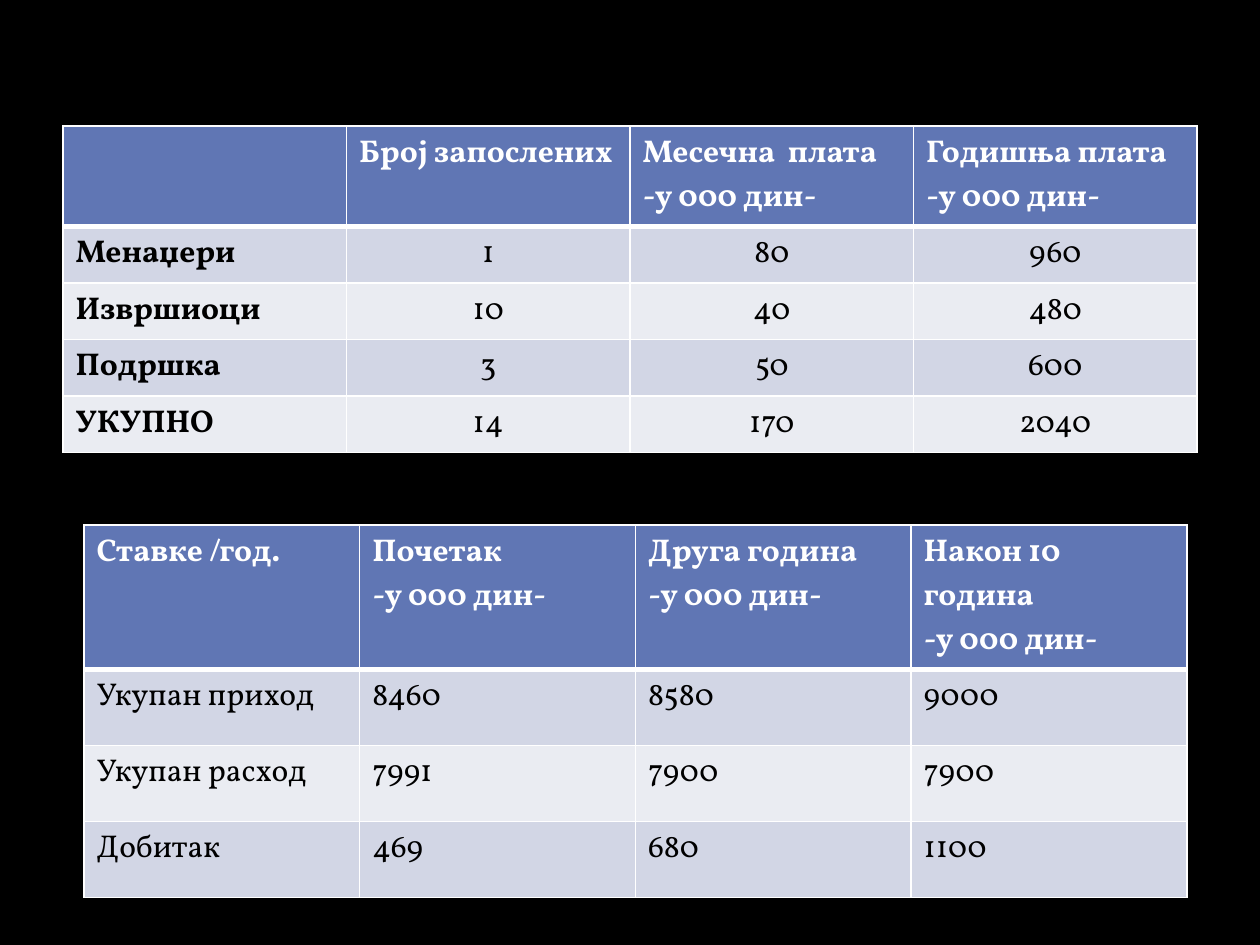
from dataclasses import dataclass

from lxml.etree import SubElement
from pptx import Presentation
from pptx.dml.color import RGBColor
from pptx.enum.text import PP_ALIGN
from pptx.oxml.ns import qn
from pptx.util import Emu, Pt

SCALE = 914400 / 126  # EMU in one px
FONT = "Vollkorn"
COLORS = {
    "back": "000000",
    "head": "6076B4",
    "odd": "D2D6E5",
    "even": "EAECF2",
    "line": "FFFFFF",
    "light": "FFFFFF",
    "dark": "000000",
}
UNIT = "-у 000 дин-"


@dataclass
class Grid:
    left: int
    top: int
    width: int
    head: int  # height of the header row
    row: int  # height of each body row
    cells: list[list[str]]
    bold: bool = False  # bold first column
    align: PP_ALIGN = PP_ALIGN.LEFT  # alignment of the values


def px(size: float) -> Emu:
    return Emu(round(size * SCALE))


def color(name: str) -> RGBColor:
    return RGBColor.from_string(COLORS[name])


def write(frame, text: str, *, tone: str = "dark", bold: bool = False,
          size: int = 18, align: PP_ALIGN = PP_ALIGN.LEFT) -> None:
    """Write each line of the text as a paragraph."""
    frame.text = text
    for para in frame.paragraphs:
        para.alignment = align
        para.font.size = Pt(size)
        for run in para.runs:
            font = run.font
            font.name, font.size, font.bold = FONT, Pt(size), bold
            font.color.rgb = color(tone)


def edge(cell, row: int) -> None:
    """Draw the cell borders, with a thick rule under the header."""
    props = cell._tc.get_or_add_tcPr()
    wide = {("lnB", 0), ("lnT", 1)}
    for side in ("lnL", "lnR", "lnT", "lnB"):
        width = Pt(3 if (side, row) in wide else 1)
        line = SubElement(props, qn(f"a:{side}"), w=str(width))
        fill = SubElement(line, qn("a:solidFill"))
        SubElement(fill, qn("a:srgbClr"), val=COLORS["line"])


def draw(slide, grid: Grid) -> None:
    rows, cols = len(grid.cells), len(grid.cells[0])
    high = grid.head + (rows - 1) * grid.row
    table = slide.shapes.add_table(
        rows, cols, px(grid.left), px(grid.top), px(grid.width), px(high)
    ).table
    for col in table.columns:
        col.width = px(grid.width / cols)
    for r, texts in enumerate(grid.cells):
        table.rows[r].height = px(grid.row if r else grid.head)
        shade = "head" if r == 0 else "odd" if r % 2 else "even"
        for c, text in enumerate(texts):
            cell = table.cell(r, c)
            edge(cell, r)
            cell.fill.solid()
            cell.fill.fore_color.rgb = color(shade)
            write(
                cell.text_frame, text,
                tone="dark" if r else "light",
                bold=r == 0 or (grid.bold and c == 0),
                align=grid.align if r and c else PP_ALIGN.LEFT,
            )


# Staff and pay
STAFF = Grid(63, 126, 1134, 100, 56, [
    ["", "Број запослених", f"Месечна  плата\n{UNIT}", f"Годишња плата\n{UNIT}"],
    ["Менаџери", "1", "80", "960"],
    ["Извршиоци", "10", "40", "480"],
    ["Подршка", "3", "50", "600"],
    ["УКУПНО", "14", "170", "2040"],
], bold=True, align=PP_ALIGN.CENTER)

# Income, costs and profit
PROFIT = Grid(84, 525, 1103, 144, 76, [
    ["Ставке /год.", f"Почетак\n{UNIT}", f"Друга година\n{UNIT}",
     f"Након 10 година\n{UNIT}"],
    ["Укупан приход", "8460", "8580", "9000"],
    ["Укупан расход", "7991", "7900", "7900"],
    ["Добитак", "469", "680", "1100"],
])


def main() -> None:
    deck = Presentation()
    deck.slide_width, deck.slide_height = px(1260), px(945)
    slide = deck.slides.add_slide(deck.slide_layouts[6])
    back = slide.background.fill
    back.solid()
    back.fore_color.rgb = color("back")
    for grid in (STAFF, PROFIT):
        draw(slide, grid)
    deck.save("out.pptx")


if __name__ == "__main__":
    main()
